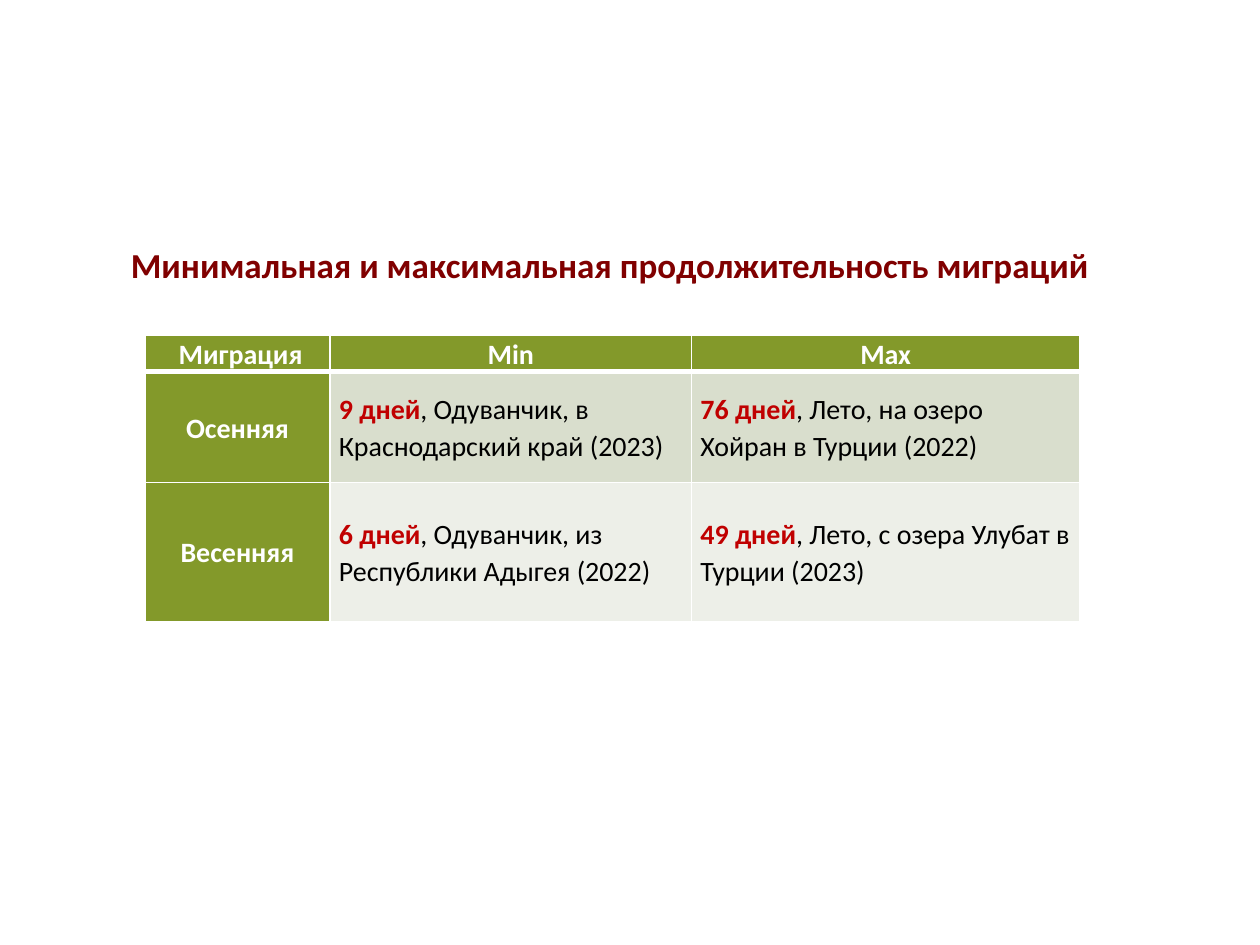
from lxml.etree import SubElement
from pptx import Presentation
from pptx.dml.color import RGBColor
from pptx.enum.text import MSO_ANCHOR as Anchor, MSO_AUTO_SIZE as AutoSize, PP_ALIGN as Align
from pptx.oxml.ns import qn
from pptx.util import Inches, Pt

FONT = "Calibri"
WHITE = RGBColor(0xFF, 0xFF, 0xFF)
BLACK = RGBColor(0x00, 0x00, 0x00)
MAROON = RGBColor(0x80, 0x00, 0x00)
RED = RGBColor(0xC0, 0x00, 0x00)
GREEN = RGBColor(0x83, 0x99, 0x2A)
BAND_FILLS = (RGBColor(0xD9, 0xDE, 0xCD), RGBColor(0xED, 0xEF, 0xE8))

COLUMN_WIDTHS = (1.47, 2.87, 3.08)
ROW_HEIGHTS = (0.26, 0.88, 1.1)
HEADERS = (" Миграция", "Min", "Max")
# Season, then (duration, details) for the shortest and longest migration
SEASONS = (
    ("Осенняя",
     ("9 дней", ", Одуванчик, в Краснодарский край (2023)"),
     ("76 дней", ", Лето, на озеро Хойран в Турции (2022)")),
    ("Весенняя",
     ("6 дней", ", Одуванчик, из Республики Адыгея (2022)"),
     ("49 дней", ", Лето, с озера Улубат в Турции (2023)")),
)


def add_run(paragraph, text, size, color, bold=True):
    run = paragraph.add_run()
    run.text = text
    run.font.name = FONT
    run.font.size = Pt(size)
    run.font.bold = bold
    run.font.color.rgb = color


def add_title(slide, text):
    box = slide.shapes.add_textbox(Inches(0.94), Inches(1.88), Inches(7.83), Inches(0.44))
    frame = box.text_frame
    frame.word_wrap = False
    frame.auto_size = AutoSize.SHAPE_TO_FIT_TEXT
    add_run(frame.paragraphs[0], text, 20, MAROON)


def set_borders(cell, bottom_width):
    properties = cell._tc.get_or_add_tcPr()
    for side, width in (("L", 1), ("R", 1), ("T", 1), ("B", bottom_width)):
        line = SubElement(properties, qn(f"a:ln{side}"), w=str(Pt(width)))
        fill = SubElement(line, qn("a:solidFill"))
        SubElement(fill, qn("a:srgbClr"), val=str(WHITE))


def prepare_cell(cell, fill, align, bottom_width=1):
    """Style a cell and return its paragraph."""
    set_borders(cell, bottom_width)
    cell.fill.solid()
    cell.fill.fore_color.rgb = fill
    cell.margin_left = cell.margin_right = Inches(0.07)
    cell.margin_top = cell.margin_bottom = 0
    cell.vertical_anchor = Anchor.MIDDLE
    paragraph = cell.text_frame.paragraphs[0]
    paragraph.alignment = align
    paragraph.line_spacing = 1.07
    return paragraph


def add_label(cell, text, bottom_width=1):
    add_run(prepare_cell(cell, GREEN, Align.CENTER, bottom_width), text, 16, WHITE)


def add_record(cell, fill, duration, details):
    paragraph = prepare_cell(cell, fill, Align.LEFT)
    add_run(paragraph, duration, 16, RED)
    add_run(paragraph, details, 16, BLACK, bold=False)


def add_migration_table(slide):
    table = slide.shapes.add_table(
        len(ROW_HEIGHTS), len(COLUMN_WIDTHS), Inches(1.15), Inches(2.66),
        Inches(sum(COLUMN_WIDTHS)), Inches(sum(ROW_HEIGHTS))).table
    for column, width in zip(table.columns, COLUMN_WIDTHS):
        column.width = Inches(width)
    for row, height in zip(table.rows, ROW_HEIGHTS):
        row.height = Inches(height)

    # Header row, with a thicker line below
    for index, header in enumerate(HEADERS):
        add_label(table.cell(0, index), header, bottom_width=3)
    table.cell(0, 0).vertical_anchor = Anchor.TOP

    # One row per season
    for row_index, (season, *records) in enumerate(SEASONS, start=1):
        add_label(table.cell(row_index, 0), season)
        for column_index, record in enumerate(records, start=1):
            add_record(table.cell(row_index, column_index),
                       BAND_FILLS[row_index - 1], *record)


def main():
    presentation = Presentation()
    presentation.slide_width = Inches(10)
    presentation.slide_height = Inches(7.5)
    slide = presentation.slides.add_slide(presentation.slide_layouts[6])
    add_migration_table(slide)
    add_title(slide, "Минимальная и максимальная продолжительность миграций")
    presentation.save("out.pptx")


if __name__ == "__main__":
    main()
